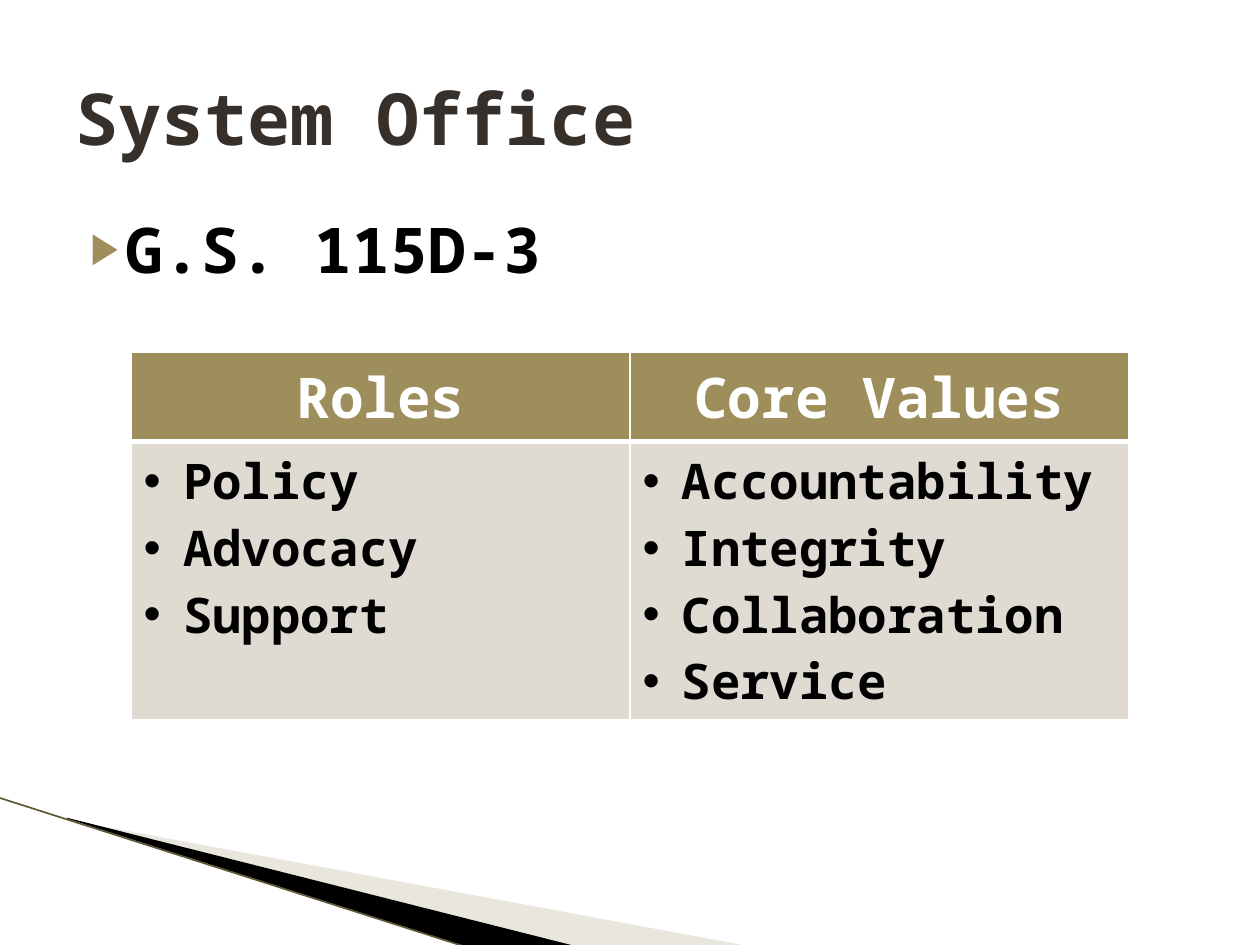
from typing import NamedTuple

from lxml.etree import SubElement as Sub
from pptx import Presentation
from pptx.dml.color import RGBColor as RGB
from pptx.enum.shapes import MSO_CONNECTOR as Conn
from pptx.enum.text import MSO_ANCHOR as Anchor, PP_ALIGN as Align
from pptx.oxml.ns import qn
from pptx.util import Pt

FONT = "Noto Sans Mono"
HUES = {
    "gold": "9E8E5C", "sand": "DFDBD2", "tan": "C9C1AC", "edge": "5F5737",
    "brown": "37302A", "black": "000000", "white": "FFFFFF",
}
ROWS = (51, 159)


class Wedge(NamedTuple):
    hue: str
    alpha: int
    spots: list


class Column(NamedTuple):
    head: str
    items: list


WEDGES = [
    Wedge("tan", 40, [(39.6, 468.7), (428.4, 540.7), (328.3, 540.7), (39.6, 468)]),
    Wedge("black", 100, [(38.2, 467.3), (329, 540.7), (267.8, 541.4), (38.9, 468)]),
]
COLUMNS = [
    Column("Roles", ["Policy", "Advocacy", "Support"]),
    Column("Core Values", ["Accountability", "Integrity", "Collaboration", "Service"]),
]


def color(name: str) -> RGB:
    return RGB.from_string(HUES[name])


def write(para, text: str, size: float, hue: str) -> None:
    run = para.add_run()
    run.text = text
    font = run.font
    font.name, font.size, font.bold = FONT, Pt(size), True
    font.color.rgb = color(hue)


def bullet(para, mark: str, left: float, hang: float,
           hue: str = "black", scale: int = 100) -> None:
    props = para._p.get_or_add_pPr()
    props.set("marL", str(Pt(left)))
    props.set("indent", str(Pt(-hang)))
    tint = Sub(props, qn("a:buClr"))
    Sub(tint, qn("a:srgbClr"), val=HUES[hue])
    Sub(props, qn("a:buSzPct"), val=str(scale * 1000))
    Sub(props, qn("a:buFont"), typeface="Arial")
    Sub(props, qn("a:buChar"), char=mark)


def draw_wedge(slide, wedge: Wedge) -> None:
    spots = [(Pt(x), Pt(y)) for x, y in wedge.spots]
    pen = slide.shapes.build_freeform(*spots[0])
    pen.add_line_segments(spots[1:])
    shape = pen.convert_to_shape()
    shape.shadow.inherit = False
    shape.line.fill.background()
    shape.fill.solid()
    shape.fill.fore_color.rgb = color(wedge.hue)
    if wedge.alpha < 100:
        tint = shape._element.spPr.find(qn("a:solidFill"))[0]
        Sub(tint, qn("a:alpha"), val=str(wedge.alpha * 1000))


def draw_edge(slide) -> None:
    line = slide.shapes.add_connector(
        Conn.STRAIGHT, Pt(-0.7), Pt(455.8), Pt(267.1), Pt(541.4))
    line.line.color.rgb = color("edge")
    line.line.width = Pt(0.95)
    Sub(line._element.spPr, qn("a:effectLst"))


def style_cell(cell, hue: str, base: float) -> None:
    props = cell._tc.get_or_add_tcPr()
    for side, width in (("L", 1), ("R", 1), ("T", 1), ("B", base)):
        edge = Sub(props, qn(f"a:ln{side}"), w=str(Pt(width)))
        fill = Sub(edge, qn("a:solidFill"))
        Sub(fill, qn("a:srgbClr"), val=HUES["white"])
    cell.fill.solid()
    cell.fill.fore_color.rgb = color(hue)


def draw_table(slide) -> None:
    table = slide.shapes.add_table(
        len(ROWS), len(COLUMNS), Pt(74.9), Pt(201.2), Pt(570.2), Pt(sum(ROWS))).table
    for row, height in zip(table.rows, ROWS):
        row.height = Pt(height)
    for col, data in enumerate(COLUMNS):
        head, body = table.cell(0, col), table.cell(1, col)
        style_cell(head, "gold", 3)
        style_cell(body, "sand", 1)
        para = head.text_frame.paragraphs[0]
        para.alignment = Align.CENTER
        write(para, data.head, 32, "white")
        frame = body.text_frame
        for num, item in enumerate(data.items):
            para = frame.add_paragraph() if num else frame.paragraphs[0]
            bullet(para, "•", 22.5, 22.5)
            write(para, item, 28, "black")


def draw_title(slide) -> None:
    title = slide.shapes.title
    title.left, title.top, title.width, title.height = Pt(36), Pt(21.6), Pt(648), Pt(90)
    frame = title.text_frame
    frame.vertical_anchor = Anchor.MIDDLE
    para = frame.paragraphs[0]
    para.alignment = Align.LEFT
    write(para, "System Office", 41, "brown")


def draw_law(slide) -> None:
    box = slide.shapes.add_textbox(Pt(36), Pt(116.6), Pt(648), Pt(356.4))
    frame = box.text_frame
    frame.word_wrap = True
    para = frame.paragraphs[0]
    bullet(para, "▶", 28.8, 20.2, "gold", 68)
    write(para, "G.S. 115D-3", 36, "black")


def main() -> None:
    deck = Presentation()
    deck.slide_width, deck.slide_height = Pt(720), Pt(540)
    slide = deck.slides.add_slide(deck.slide_layouts[5])
    for wedge in WEDGES:
        draw_wedge(slide, wedge)
    draw_edge(slide)
    draw_law(slide)
    draw_title(slide)
    draw_table(slide)
    deck.save("out.pptx")


if __name__ == "__main__":
    main()
